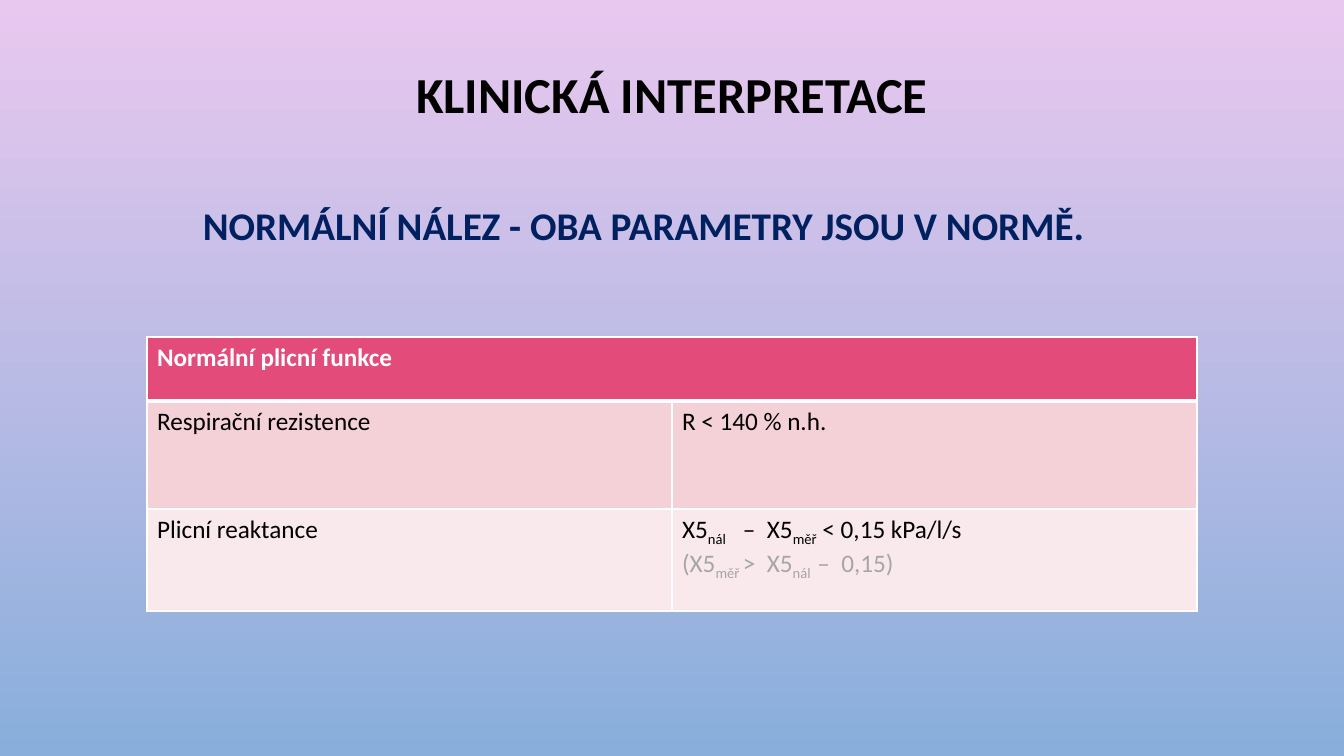
from pptx import Presentation
from pptx.dml.color import RGBColor
from pptx.enum.text import MSO_ANCHOR, PP_ALIGN
from pptx.oxml import parse_xml
from pptx.oxml.ns import nsdecls
from pptx.util import Emu, Pt

BLACK = RGBColor(0x00, 0x00, 0x00)
WHITE = RGBColor(0xFF, 0xFF, 0xFF)
NAVY = RGBColor(0x00, 0x20, 0x60)
GREY = RGBColor(0xA6, 0xA6, 0xA6)
ROSE = RGBColor(0xE3, 0x4B, 0x7A)
PINK = RGBColor(0xF4, 0xD0, 0xD7)
PALE = RGBColor(0xFA, 0xE9, 0xEC)
LILAC = RGBColor(0xE9, 0xC8, 0xEF)
BLUE = RGBColor(0x89, 0xAE, 0xDB)


def px(n):
    return Emu(round(n * 914400 / 100.8))


def write(par, parts, size, color, bold=False):
    """Add runs to a paragraph; every second part is a subscript."""
    for i, part in enumerate(parts):
        run = par.add_run()
        run.text = part
        form = {"name": "Calibri", "size": Pt(size), "bold": bold}
        for key, val in form.items():
            setattr(run.font, key, val)
        run.font.color.rgb = color
        if i % 2:
            run.font._element.set("baseline", "-25000")


deck = Presentation()
deck.slide_width, deck.slide_height = px(1344), px(756)
slide = deck.slides.add_slide(deck.slide_layouts[6])

# Background, lilac at the top to blue at the bottom
back = slide.background.fill
back.gradient()
back.gradient_angle = 270
for stop, color, place in zip(back.gradient_stops, (LILAC, BLUE), (0, 1)):
    stop.color.rgb = color
    stop.position = place

# Title and finding
heads = [
    ("KLINICKÁ INTERPRETACE", (101, 32, 1142, 130), 36, BLACK,
     MSO_ANCHOR.MIDDLE, PP_ALIGN.CENTER, 0.9, 0),
    ("NORMÁLNÍ NÁLEZ - OBA PARAMETRY JSOU V NORMĚ.", (181, 187, 1142, 377), 28, NAVY,
     MSO_ANCHOR.TOP, PP_ALIGN.LEFT, 1.2, 12),
]
for text, spot, size, color, anchor, align, space, left in heads:
    frame = slide.shapes.add_textbox(*map(px, spot)).text_frame
    frame.word_wrap = True
    frame.vertical_anchor = anchor
    par = frame.paragraphs[0]
    par.alignment = align
    par.line_spacing = space
    par._p.get_or_add_pPr().set("marL", str(px(left)))
    write(par, [text], size, color, bold=True)

# Table: one list of paragraphs per cell, one list of parts per paragraph
rows = [
    (64, ROSE, WHITE, [[["Normální plicní funkce"]], []]),
    (108, PINK, BLACK, [[["Respirační rezistence"]], [["R < 140 % n.h."]]]),
    (102, PALE, BLACK, [
        [["Plicní reaktance"]],
        [["X5", "nál", "   –  X5", "měř", " < 0,15 kPa/l/s"],
         ["(X5", "měř ", ">  X5", "nál  ", "–  0,15)"]],
    ]),
]
high = sum(row[0] for row in rows)
grid = slide.shapes.add_table(3, 2, px(147), px(337), px(1050), px(high)).table
for col in grid.columns:
    col.width = px(525)
grid.cell(0, 0).merge(grid.cell(0, 1))

for r, (tall, fill, ink, cells) in enumerate(rows):
    grid.rows[r].height = px(tall)
    for c, pars in enumerate(cells):
        cell = grid.cell(r, c)
        cell.fill.solid()
        cell.fill.fore_color.rgb = fill
        frame = cell.text_frame
        for i, parts in enumerate(pars):
            par = frame.add_paragraph() if i else frame.paragraphs[0]
            # The second line of a cell is a greyed variant
            write(par, parts, 18, GREY if i else ink, bold=r == 0)

        # White borders, thick below the header
        wide = {"L": 1, "R": 1, "T": 3 if r == 1 else 1, "B": 3 if r == 0 else 1}
        for i, (side, width) in enumerate(wide.items()):
            line = parse_xml(
                f'<a:ln{side} {nsdecls("a")} w="{Pt(width)}"><a:solidFill>'
                f'<a:srgbClr val="{WHITE}"/></a:solidFill></a:ln{side}>')
            cell._tc.get_or_add_tcPr().insert(i, line)

deck.save("out.pptx")
